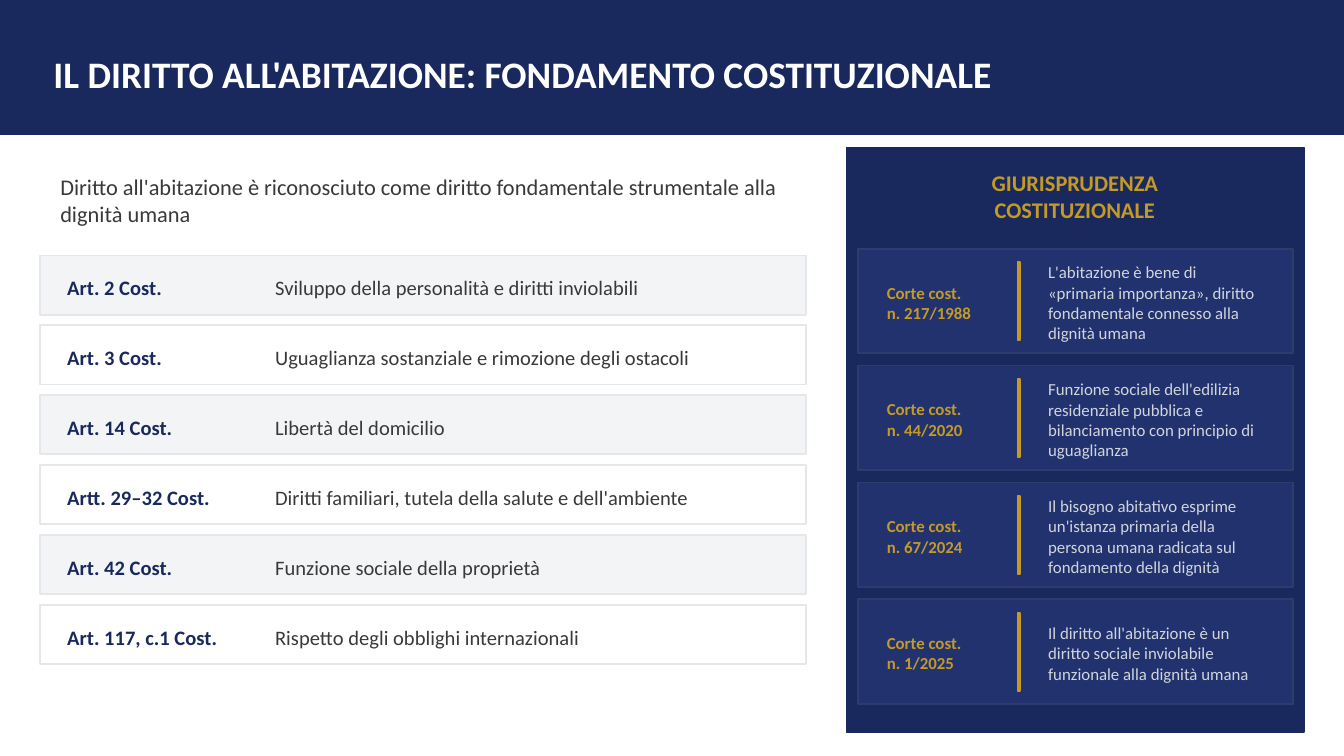
from pptx import Presentation
from pptx.dml.color import RGBColor
from pptx.enum.shapes import MSO_SHAPE
from pptx.enum.text import MSO_AUTO_SIZE, PP_ALIGN
from pptx.util import Cm, Pt

NAVY = RGBColor(0x19, 0x29, 0x5D)
CARD_BLUE = RGBColor(0x21, 0x32, 0x6F)
CARD_EDGE = RGBColor(0x2C, 0x3D, 0x6D)
GOLD = RGBColor(0xC4, 0x9A, 0x27)
WHITE = RGBColor(0xFF, 0xFF, 0xFF)
PALE = RGBColor(0xF3, 0xF4, 0xF6)
ROW_EDGE = RGBColor(0xE5, 0xE7, 0xEB)
INK = RGBColor(0x39, 0x39, 0x39)
SILVER = RGBColor(0xD1, 0xD5, 0xDB)

ARTICLES = [
    ("Art. 2 Cost.", "Sviluppo della personalità e diritti inviolabili"),
    ("Art. 3 Cost.", "Uguaglianza sostanziale e rimozione degli ostacoli"),
    ("Art. 14 Cost.", "Libertà del domicilio"),
    ("Artt. 29–32 Cost.", "Diritti familiari, tutela della salute e dell'ambiente"),
    ("Art. 42 Cost.", "Funzione sociale della proprietà"),
    ("Art. 117, c.1 Cost.", "Rispetto degli obblighi internazionali"),
]

# Ruling number, principle, lines the principle takes up
RULINGS = [
    ("n. 217/1988", "L'abitazione è bene di «primaria importanza», diritto "
     "fondamentale connesso alla dignità umana", 4),
    ("n. 44/2020", "Funzione sociale dell'edilizia residenziale pubblica e "
     "bilanciamento con principio di uguaglianza", 4),
    ("n. 67/2024", "Il bisogno abitativo esprime un'istanza primaria della "
     "persona umana radicata sul fondamento della dignità", 4),
    ("n. 1/2025", "Il diritto all'abitazione è un diritto sociale inviolabile "
     "funzionale alla dignità umana", 3),
]

ROW_TOP, ROW_HEIGHT, ROW_PITCH = 4.83, 1.12, 1.32
CARD_TOP, CARD_HEIGHT, CARD_PITCH = 4.7, 1.98, 2.21


def add_panel(slide, left, top, width, height, fill, edge):
    panel = slide.shapes.add_shape(
        MSO_SHAPE.RECTANGLE, Cm(left), Cm(top), Cm(width), Cm(height))
    panel.shadow.inherit = False
    panel.fill.solid()
    panel.fill.fore_color.rgb = fill
    panel.line.color.rgb = edge
    panel.line.width = Pt(1)


def add_text(slide, left, top, width, height, lines, size, color,
             bold=False, align=PP_ALIGN.LEFT):
    box = slide.shapes.add_textbox(Cm(left), Cm(top), Cm(width), Cm(height))
    frame = box.text_frame
    frame.word_wrap = True
    frame.auto_size = MSO_AUTO_SIZE.SHAPE_TO_FIT_TEXT
    for index, line in enumerate(lines):
        paragraph = frame.add_paragraph() if index else frame.paragraphs[0]
        paragraph.alignment = align
        run = paragraph.add_run()
        run.text = line
        run.font.name = "Calibri"
        run.font.size = Pt(size)
        run.font.bold = bold
        run.font.color.rgb = color


def add_article(slide, top, article, right, fill):
    add_panel(slide, 0.76, top, 14.48, ROW_HEIGHT, fill, ROW_EDGE)
    add_text(slide, 1.02, top + 0.25, 3.56, 0.64, [article], 11, NAVY, bold=True)
    add_text(slide, 4.95, top + 0.25, 9.91, 0.64, [right], 11, INK)


def add_ruling(slide, top, number, principle, line_count):
    add_panel(slide, 16.21, top, 8.23, CARD_HEIGHT, CARD_BLUE, CARD_EDGE)
    add_text(slide, 16.51, top + 0.51, 2.54, 0.97, ["Corte cost.", number],
             9, GOLD, bold=True)
    add_panel(slide, 19.23, top + 0.25, 0.05, CARD_HEIGHT - 0.5, GOLD, GOLD)
    # Centre the principle vertically in its card
    height = 0.2 + 0.38 * line_count
    add_text(slide, 19.56, top + (CARD_HEIGHT - height) / 2, 4.57, height,
             [principle], 9, SILVER)


def main():
    presentation = Presentation()
    presentation.slide_width = Cm(25.4)
    presentation.slide_height = Cm(14.29)
    slide = presentation.slides.add_slide(presentation.slide_layouts[6])

    # Title band
    add_panel(slide, 0, 0, 25.4, 2.54, NAVY, NAVY)
    add_text(slide, 0.76, 0.84, 23.88, 0.97,
             ["IL DIRITTO ALL'ABITAZIONE: FONDAMENTO COSTITUZIONALE"],
             20, WHITE, bold=True)

    # Constitutional articles
    add_text(slide, 0.89, 3.15, 14.48, 1.22,
             ["Diritto all'abitazione è riconosciuto come diritto "
              "fondamentale strumentale alla dignità umana"], 12, INK)
    for index, (article, right) in enumerate(ARTICLES):
        fill = WHITE if index % 2 else PALE
        add_article(slide, ROW_TOP + index * ROW_PITCH, article, right, fill)

    # Constitutional case law
    add_panel(slide, 16, 2.79, 8.64, 11.05, NAVY, NAVY)
    add_text(slide, 16.38, 3.07, 7.87, 1.22,
             ["GIURISPRUDENZA", "COSTITUZIONALE"], 12, GOLD,
             bold=True, align=PP_ALIGN.CENTER)
    for index, ruling in enumerate(RULINGS):
        add_ruling(slide, CARD_TOP + index * CARD_PITCH, *ruling)

    presentation.save("out.pptx")


if __name__ == "__main__":
    main()
